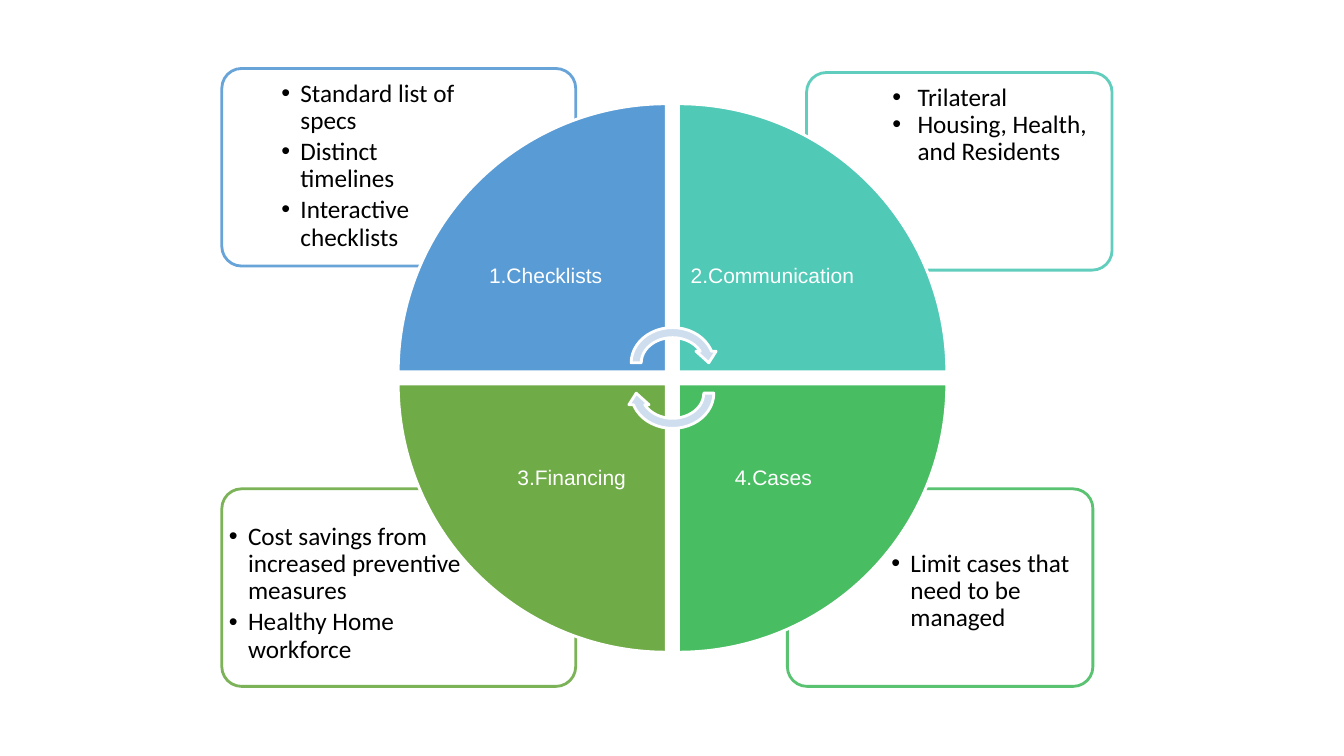
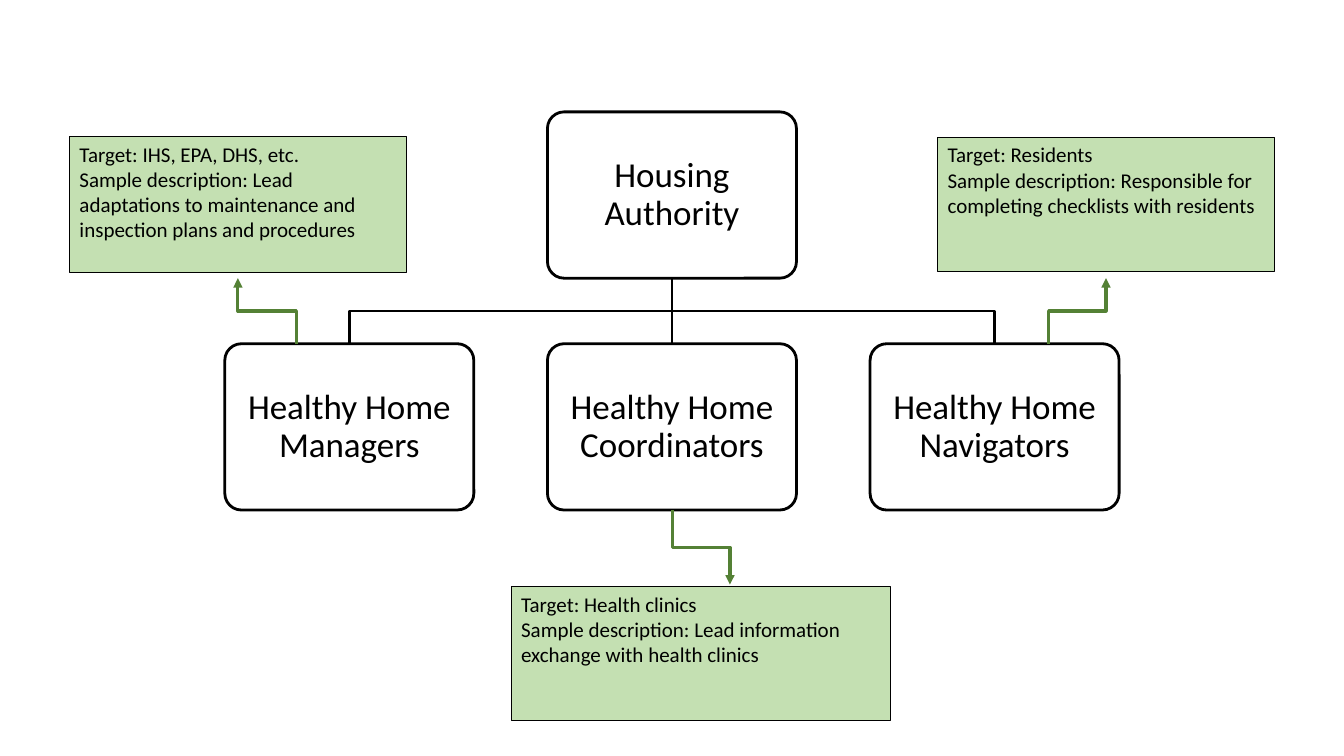
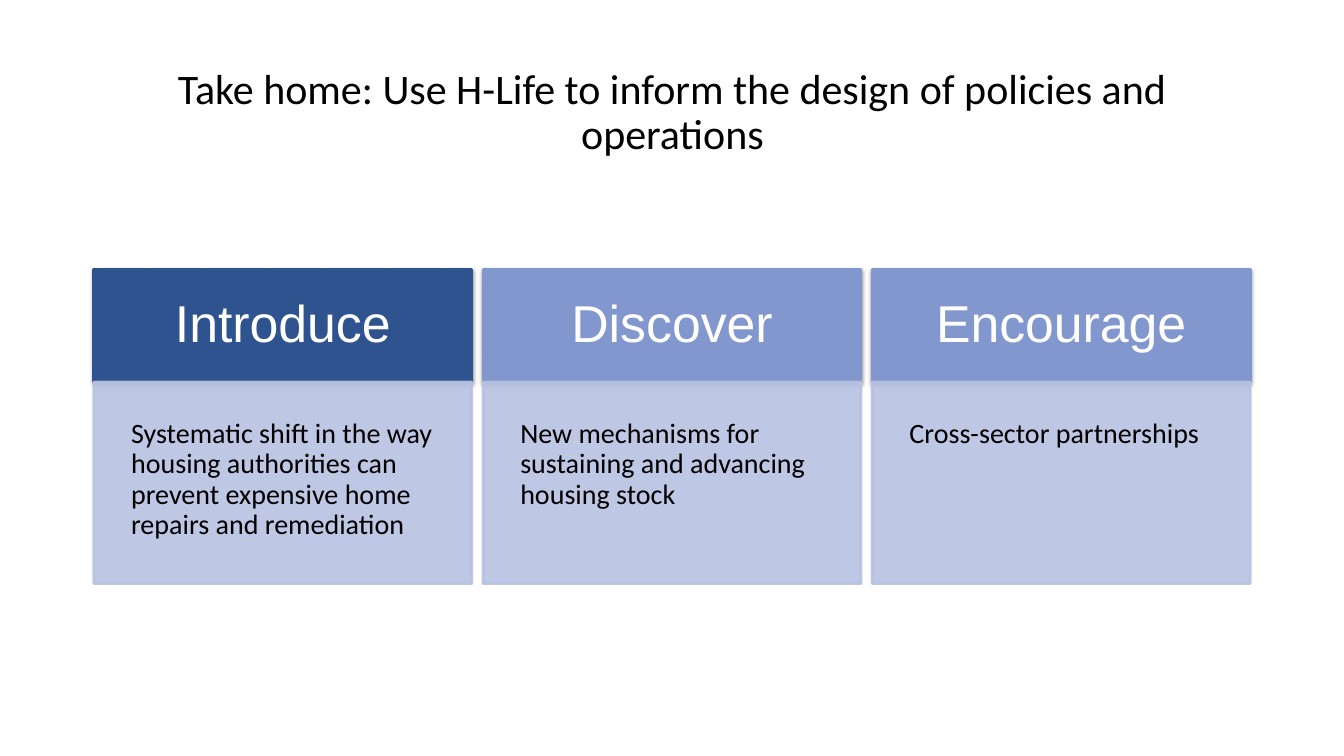
import pptx
import pptx.util
import pptx.dml.color
import pptx.enum.shapes
import pptx.enum.text
import pptx.oxml
import pptx.oxml.ns
import lxml.etree

Inches = pptx.util.Inches
Pt = pptx.util.Pt
SHAPES = pptx.enum.shapes.MSO_SHAPE
CONNECTORS = pptx.enum.shapes.MSO_CONNECTOR
ANCHOR = pptx.enum.text.MSO_ANCHOR
ALIGN = pptx.enum.text.PP_ALIGN
qn = pptx.oxml.ns.qn

COLORS = {
    "black": "000000",
    "white": "FFFFFF",
    "blue": "599BD5",
    "teal": "50C9B6",
    "green": "48BD62",
    "olive": "6FAB46",
    "pale_blue": "CFDEEF",
    "pale_green": "C4E0B2",
    "arrow": "548135",
    "navy": "2E538F",
    "periwinkle": "8297CD",
    "lavender": "B7C1E1",
}


def rgb(name):
    return pptx.dml.color.RGBColor.from_string(COLORS[name])


def add_element(parent, tag, **attributes):
    values = {key: str(value) for key, value in attributes.items()}
    return lxml.etree.SubElement(parent, qn(tag), values)


def add_box(slide, kind, box, fill, line, width=2, alpha=None):
    shape = slide.shapes.add_shape(kind, *map(Inches, box))
    shape.shadow.inherit = False
    shape.fill.solid()
    shape.fill.fore_color.rgb = rgb(fill)
    shape.line.color.rgb = rgb(line)
    shape.line.width = Pt(width)
    if kind == SHAPES.ROUNDED_RECTANGLE:
        shape.adjustments[0] = 0.1
    if alpha:
        for color in shape._element.spPr.iter(qn("a:srgbClr")):
            add_element(color, "a:alpha", val=alpha * 1000)
    return shape


def add_shadow(shape):
    effects = shape._element.spPr.find(qn("a:effectLst"))
    shadow = add_element(effects, "a:outerShdw", blurRad=Pt(3.1), dist=Pt(1.6),
                         dir=5400000, algn="ctr", rotWithShape=0)
    color = add_element(shadow, "a:srgbClr", val=COLORS["black"])
    add_element(color, "a:alpha", val=38000)


def write(shape, lines, size, font="Calibri", color="black", align=ALIGN.LEFT,
          anchor=ANCHOR.TOP, inset=(0.1, 0.05), spacing=0.9):
    frame = shape.text_frame
    frame.word_wrap = True
    frame.vertical_anchor = anchor
    frame.margin_left = frame.margin_right = Inches(inset[0])
    frame.margin_top = frame.margin_bottom = Inches(inset[1])
    frame.text = "\n".join(lines)
    for paragraph in frame.paragraphs:
        paragraph.alignment = align
        paragraph.line_spacing = spacing
        paragraph.font.size = Pt(size)
        paragraph.font.name = font
        paragraph.font.color.rgb = rgb(color)
    return frame


def add_text(slide, box, lines, size, **style):
    return write(slide.shapes.add_textbox(*map(Inches, box)), lines, size, **style)


def add_bullets(slide, box, lines, indent, gap, inset, anchor):
    frame = add_text(slide, box, lines, 18, inset=(inset, inset), anchor=anchor)
    for index, paragraph in enumerate(frame.paragraphs):
        paragraph.space_before = Pt(gap if index else 0)
        properties = paragraph._p.get_or_add_pPr()
        properties.set("marL", str(Inches(indent)))
        properties.set("indent", str(-Inches(indent)))
        bullet_font = lxml.etree.Element(qn("a:buFont"), typeface="Arial")
        bullet = lxml.etree.Element(qn("a:buChar"), char="•")
        properties.insert_element_before(bullet_font, "a:tabLst", "a:defRPr", "a:extLst")
        properties.insert_element_before(bullet, "a:tabLst", "a:defRPr", "a:extLst")


def add_link(slide, start, end, color, width, arrow=False):
    dx, dy = end[0] - start[0], end[1] - start[1]
    kind = CONNECTORS.ELBOW if dx else CONNECTORS.STRAIGHT
    if dx:
        center_x, center_y = start[0] + dx / 2, start[1] + dy / 2
        reach = abs(dy) / 2 * (-1 if (dx > 0) == (dy > 0) else 1)
        start = center_x - reach, center_y - abs(dx) / 2
        end = center_x + reach, center_y + abs(dx) / 2
    connector = slide.shapes.add_connector(kind, *map(Inches, start + end))
    connector.line.color.rgb = rgb(color)
    connector.line.width = Pt(width)
    properties = connector._element.spPr
    if dx:
        properties.find(qn("a:xfrm")).set("rot", str((270 if dx > 0 else 90) * 60000))
    if arrow:
        add_element(properties.find(qn("a:ln")), "a:tailEnd", type="triangle")
    add_element(properties, "a:effectLst")


def add_wheel(slide, center_x, center_y, quadrants):
    gap, radius, label_side = 0.06, 2.66, 1.88

    def quadrant_box(side, right, below):
        left = center_x + (gap if right else -gap - side)
        top = center_y + (gap if below else -gap - side)
        return left, top, side, side

    for label, color, right, below, rotation, align in quadrants:
        wedge = add_box(slide, SHAPES.PIE_WEDGE, quadrant_box(radius, right, below),
                        color, "white")
        wedge.rotation = rotation
        add_text(slide, quadrant_box(label_side, right, below), [label], 15,
                 font="Arial", color="white", align=align,
                 anchor=ANCHOR.MIDDLE, inset=(0.12, 0.12))
    for offset, rotation in ((-0.15, 0), (0.15, 180)):
        box = (center_x - 0.46, center_y + offset - 0.4, 0.92, 0.8)
        arrow = add_box(slide, SHAPES.CIRCULAR_ARROW, box, "pale_blue", "white")
        arrow.rotation = rotation


def build_cycle(slide):
    panels = [
        ((7.81, 4.85, 3.03, 1.96), "green", (8.77, 5.39, 2.03, 1.39),
         ["Limit cases that need to be managed"], 0.19, 0, 0.07, ANCHOR.TOP),
        ((2.2, 4.85, 3.51, 1.96), "olive", (2.2, 5.09, 2.65, 1.6),
         ["Cost savings from increased preventive measures", "Healthy Home workforce"],
         0.19, 2.7, 0.07, ANCHOR.MIDDLE),
        ((8, 0.72, 3.03, 1.96), "teal", (8.77, 0.76, 2.22, 1.39),
         ["Trilateral", "Housing, Health, and Residents"], 0.25, 0, 0.08, ANCHOR.TOP),
        ((2.2, 0.68, 3.51, 1.96), "blue", (2.72, 0.73, 2.03, 1.39),
         ["Standard list of specs", "Distinct timelines", "Interactive checklists"],
         0.19, 2.7, 0.07, ANCHOR.TOP),
    ]
    for box, color, text_box, *bullets in panels:
        add_box(slide, SHAPES.ROUNDED_RECTANGLE, box, "white", color, alpha=90)
        add_bullets(slide, text_box, *bullets)
    add_wheel(slide, 6.67, 3.75, [
        ("1.Checklists", "blue", False, False, 0, ALIGN.LEFT),
        ("2.Communication", "teal", True, False, 90, ALIGN.LEFT),
        ("4.Cases", "green", True, True, 180, ALIGN.CENTER),
        ("3.Financing", "olive", False, True, 270, ALIGN.CENTER),
    ])


def add_organization(slide, left, top, parent, children):
    width, height, pitch, drop = 2.47, 1.65, 3.2, 2.3
    middle = left + pitch + width / 2
    nodes = [(parent, left + pitch, top)]
    for index, name in enumerate(children):
        child_left = left + index * pitch
        nodes.append((name, child_left, top + drop))
        add_link(slide, (middle, top + height),
                 (child_left + width / 2, top + drop), "black", 2)
    for name, node_left, node_top in nodes:
        node = add_box(slide, SHAPES.ROUNDED_RECTANGLE,
                       (node_left, node_top, width, height), "white", "black")
        write(node, [name], 25, align=ALIGN.CENTER, anchor=ANCHOR.MIDDLE,
              inset=(0.15, 0.15))


def build_roles(slide):
    add_organization(slide, 2.23, 1.11, "Housing Authority", [
        "Healthy Home Managers", "Healthy Home Coordinators", "Healthy Home Navigators"])
    notes = [
        ((5.07, 5.82, 3.76, 1.33), "Health clinics",
         "Lead information exchange with health clinics", (6.67, 5.06), (7.24, 5.8)),
        ((0.69, 1.35, 3.34, 1.35), "IHS, EPA, DHS, etc.",
         "Lead adaptations to maintenance and inspection plans and procedures",
         (2.94, 3.41), (2.36, 2.76)),
        ((9.3, 1.36, 3.34, 1.33), "Residents",
         "Responsible for completing checklists with residents",
         (10.4, 3.41), (10.97, 2.76)),
    ]
    for box, target, description, start, end in notes:
        note = add_box(slide, SHAPES.RECTANGLE, box, "pale_green", "black", 0.75)
        write(note, [f"Target: {target}", f"Sample description: {description}"], 15,
              spacing=1.0)
        add_link(slide, start, end, "arrow", 2.25, arrow=True)


def add_column(slide, left, top, heading, detail, color):
    width, heading_height, detail_height = 3.75, 1.12, 2
    header = add_box(slide, SHAPES.RECTANGLE, (left, top, width, heading_height),
                     color, color)
    add_shadow(header)
    write(header, [heading], 37, font="Arial", color="white", align=ALIGN.CENTER,
          anchor=ANCHOR.MIDDLE, inset=(0.3, 0.3))
    body = add_box(slide, SHAPES.RECTANGLE,
                   (left, top + heading_height, width, detail_height),
                   "lavender", "lavender", alpha=90)
    write(body, [detail], 20, inset=(0.37, 0.37))


def build_takeaways(slide):
    add_text(slide, (0.92, 0.4, 11.5, 1.45),
             ["Take home: Use H-Life to inform the design of policies and operations"],
             30, align=ALIGN.CENTER, anchor=ANCHOR.MIDDLE)
    columns = [
        ("Introduce", "Systematic shift in the way housing authorities can prevent "
         "expensive home repairs and remediation", "navy"),
        ("Discover", "New mechanisms for sustaining and advancing housing stock",
         "periwinkle"),
        ("Encourage", "Cross-sector partnerships", "periwinkle"),
    ]
    for index, column in enumerate(columns):
        add_column(slide, 0.93 + index * 3.86, 2.67, *column)


def main():
    presentation = pptx.Presentation()
    presentation.slide_width = Inches(13.33)
    presentation.slide_height = Inches(7.5)
    for build in (build_cycle, build_roles, build_takeaways):
        build(presentation.slides.add_slide(presentation.slide_layouts[6]))
    presentation.save("out.pptx")


if __name__ == "__main__":
    main()
